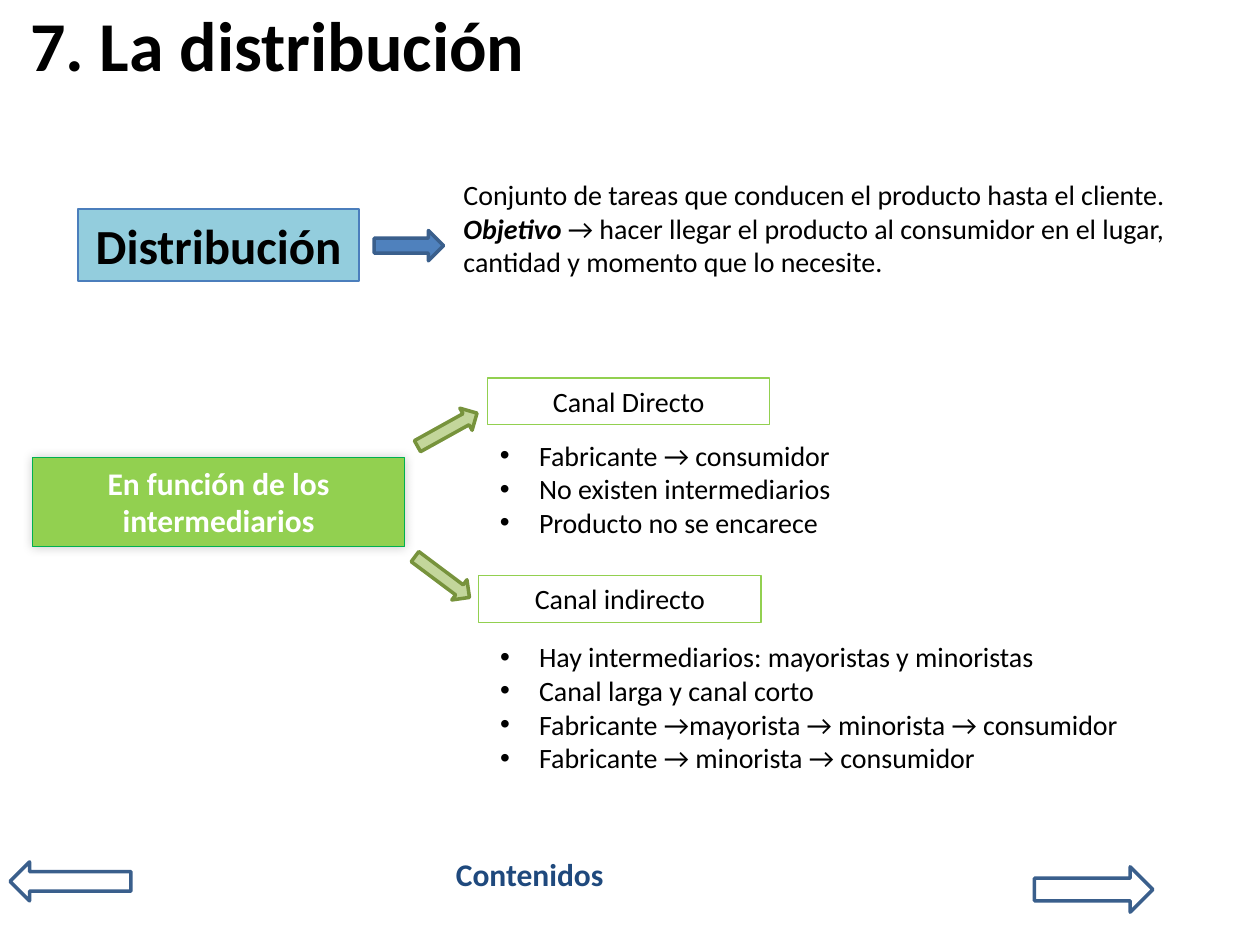
from lxml import etree
from pptx import Presentation
from pptx import util as u
from pptx.dml.color import RGBColor
from pptx.enum import shapes, text
from pptx.oxml import parse_xml
from pptx.oxml.ns import nsdecls, qn

COLORS = {
    "black": "000000", "white": "FFFFFF", "navy": "1F497D",
    "sky": "93CDDD", "sky_line": "4B7EBC",
    "blue": "4F81BD", "blue_line": "3A5F8C",
    "lime": "92D050", "green": "00B050",
    "olive": "C3D69B", "olive_line": "77933C",
}
COLUMNS, ROWS = 100, 75
SHAPE = shapes.MSO_SHAPE
CENTER = text.PP_ALIGN.CENTER
MIDDLE = text.MSO_ANCHOR.MIDDLE
TOP = text.MSO_ANCHOR.TOP

prs = Presentation()
prs.slide_width, prs.slide_height = u.Inches(10), u.Inches(7.5)
slide = prs.slides.add_slide(prs.slide_layouts[6])


def rgb(name):
    return RGBColor.from_string(COLORS[name])


def place(box, left, top, width, height):
    column, row = prs.slide_width / COLUMNS, prs.slide_height / ROWS
    return [int(n) for n in ((box[0] + left) * column, (box[1] + top) * row,
                             width * column, height * row)]


def add_bullet(paragraph):
    props = paragraph._p.get_or_add_pPr()
    props.set("marL", str(u.Inches(0.31)))
    props.set("indent", str(-u.Inches(0.31)))
    etree.SubElement(props, qn("a:buFont")).set("typeface", "Arial")
    etree.SubElement(props, qn("a:buChar")).set("char", "•")


def write(part, paragraphs, size=16, color="black", bold=False, align=None,
          anchor=TOP, bullets=False):
    frame = part.text_frame
    fit = text.MSO_AUTO_SIZE.SHAPE_TO_FIT_TEXT if anchor == TOP else text.MSO_AUTO_SIZE.NONE
    for key, value in {"word_wrap": True, "vertical_anchor": anchor, "auto_size": fit}.items():
        setattr(frame, key, value)
    for index, runs in enumerate(paragraphs):
        paragraph = frame.add_paragraph() if index else frame.paragraphs[0]
        if bullets:
            add_bullet(paragraph)
        paragraph.alignment = align
        for words, extra in [(runs, {})] if isinstance(runs, str) else runs:
            run = paragraph.add_run()
            run.text = words
            look = {"name": "Calibri", "size": u.Pt(size), "bold": bold, **extra}
            for key, value in look.items():
                setattr(run.font, key, value)
            run.font.color.rgb = rgb(color)


def label(area, paragraphs, **look):
    write(slide.shapes.add_textbox(*area), paragraphs, **look)


def block(kind, area, fill, line, weight=0.75, rotation=0):
    part = slide.shapes.add_shape(kind, *area)
    part.shadow.inherit = False
    part.rotation = rotation
    if fill:
        part.fill.solid()
        part.fill.fore_color.rgb = rgb(fill)
    else:
        part.fill.background()
    part.line.color.rgb = rgb(line)
    part.line.width = u.Pt(weight)
    return part


def add_glow(part):
    effects = part._element.spPr.find(qn("a:effectLst"))
    effects.append(parse_xml(
        f'<a:outerShdw {nsdecls("a")} blurRad="{u.Pt(6)}" dist="0" dir="13500000">'
        f'<a:srgbClr val="{COLORS["black"]}"><a:alpha val="20000"/></a:srgbClr>'
        '</a:outerShdw>'))


def heading(box):
    label(place(box, 0, 0, *box[2:]), ["7. La distribución"],
          size=40, bold=True, anchor=MIDDLE)


def definition(box):
    term = block(SHAPE.RECTANGLE, place(box, 0, 3, 22.3, 5.7), "sky", "sky_line")
    write(term, ["Distribución"], size=28, bold=True, align=CENTER)
    block(SHAPE.RIGHT_ARROW, place(box, 23.5, 4.7, 5.5, 2.4), "blue", "blue_line", 2)
    goal = [("Objetivo ", {"bold": True, "italic": True}),
            ("→ hacer llegar el producto al consumidor en el lugar, "
             "cantidad y momento que lo necesite.", {})]
    label(place(box, 29.6, 0, box[2] - 29.6, 9.1),
          ["Conjunto de tareas que conducen el producto hasta el cliente.", goal])


def criterion(box):
    cause = block(SHAPE.RECTANGLE, place(box, 0, 3.2, 29.5, 7.1), "lime", "green")
    add_glow(cause)
    write(cause, ["En función de los intermediarios"],
          size=18, color="white", bold=True, align=CENTER)
    for left, top, rotation in ((30.2, 0, 331), (29.8, 11.7, 36.8)):
        block(SHAPE.RIGHT_ARROW, place(box, left, top, 5.4, 2),
              "olive", "olive_line", 2, rotation)


def channel(box, name, name_left, facts_top, facts):
    title = block(SHAPE.RECTANGLE, place(box, name_left, 0, 22.4, 3.7), None, "lime")
    write(title, [name], align=CENTER)
    label(place(box, 0, facts_top, box[2], box[3] - facts_top), facts, bullets=True)


def navigation(box):
    for kind, area in ((SHAPE.LEFT_ARROW, (0, 1, 9.6, 3.1)),
                       (SHAPE.RIGHT_ARROW, (81.3, 1.4, 9.4, 3.6))):
        block(kind, place(box, *area), None, "blue_line", 2)
    label(place(box, 34.4, 0, 14.4, 4), ["Contenidos"],
          size=18, color="navy", bold=True)


heading((1.4, 0.3, 94.2, 6.3))
definition((6.2, 13.6, 91.1, 9.1))
criterion((2.6, 33.1, 35.6, 13.7))
channel((38.7, 30, 33.4, 13.4), "Canal Directo", 0, 4.3, [
    "Fabricante → consumidor",
    "No existen intermediarios",
    "Producto no se encarece"])
channel((38.7, 45.7, 59.5, 16.4), "Canal indirecto", -0.7, 4.6, [
    "Hay intermediarios: mayoristas y minoristas",
    "Canal larga y canal corto",
    "Fabricante →mayorista → minorista → consumidor",
    "Fabricante → minorista → consumidor"])
navigation((0.8, 67.4, 90.7, 5))
prs.save("out.pptx")
